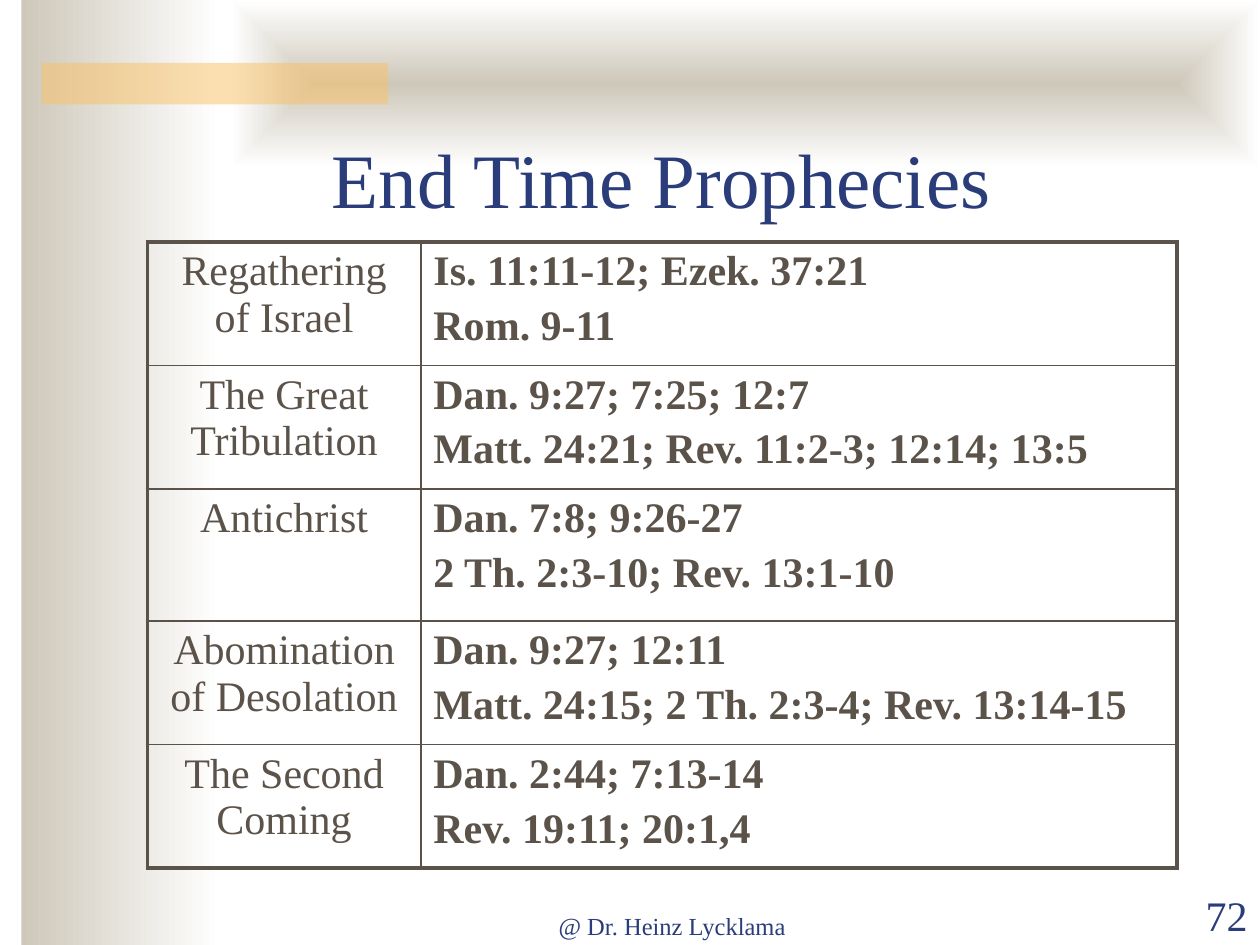
from lxml import etree
from pptx import Presentation
from pptx.dml.color import RGBColor
from pptx.enum.shapes import MSO_SHAPE
from pptx.enum.text import MSO_ANCHOR, MSO_AUTO_SIZE, PP_ALIGN
from pptx.oxml.ns import qn
from pptx.util import Inches, Pt

RECTANGLE = MSO_SHAPE.RECTANGLE
BOTTOM = MSO_ANCHOR.BOTTOM
NO_AUTOFIT = MSO_AUTO_SIZE.NONE
LEFT, CENTER, RIGHT = PP_ALIGN.LEFT, PP_ALIGN.CENTER, PP_ALIGN.RIGHT

FONT = "Times New Roman"
COLORS = {"navy": "2A3D7A", "brown": "5B5249", "stone": "CEC8BA",
          "white": "FFFFFF", "amber": "FAC164"}

PROPHECIES = [
    ("Regathering of Israel", ["Is. 11:11-12; Ezek. 37:21", "Rom. 9-11"]),
    ("The Great Tribulation",
     ["Dan. 9:27; 7:25; 12:7", "Matt. 24:21; Rev. 11:2-3; 12:14; 13:5"]),
    ("Antichrist", ["Dan. 7:8; 9:26-27", "2 Th. 2:3-10; Rev. 13:1-10"]),
    ("Abomination of Desolation",
     ["Dan. 9:27; 12:11", "Matt. 24:15; 2 Th. 2:3-4; Rev. 13:14-15"]),
    ("The Second Coming", ["Dan. 2:44; 7:13-14", "Rev. 19:11; 20:1,4"]),
]
COLUMN_WIDTHS = [2.17, 6]
ROW_HEIGHTS = [0.98, 0.98, 1.05, 0.98, 0.98]
OUTER_LINE, INNER_LINE = 2.25, 1


def rgb(name):
    return RGBColor.from_string(COLORS[name])


class SlideBuilder:
    def __init__(self, presentation):
        self.slide = presentation.slides.add_slide(presentation.slide_layouts[5])
        self.shapes = self.slide.shapes

    def rectangle(self, *box):
        shape = self.shapes.add_shape(RECTANGLE, *map(Inches, box))
        shape.shadow.inherit = False
        shape.line.fill.background()
        return shape

    def gradient_rectangle(self, *box, from_center=False):
        """Fade from stone to white, left to right or outward from the center."""
        shape = self.rectangle(*box)
        shape.fill.gradient()
        shape.fill.gradient_angle = 0
        for stop, position, color in zip(shape.fill.gradient_stops, (0, 1), ("stone", "white")):
            stop.position = position
            stop.color.rgb = rgb(color)
        if from_center:
            gradient = shape.element.spPr.find(qn("a:gradFill"))
            shade = etree.Element(qn("a:path"), path="shape")
            sides = dict.fromkeys("ltrb", "50000")
            etree.SubElement(shade, qn("a:fillToRect"), sides)
            gradient.replace(gradient.find(qn("a:lin")), shade)

    def translucent_rectangle(self, *box, color, opacity):
        shape = self.rectangle(*box)
        shape.fill.solid()
        shape.fill.fore_color.rgb = rgb(color)
        color_element = shape.element.spPr.find(".//" + qn("a:srgbClr"))
        etree.SubElement(color_element, qn("a:alpha"), val=str(opacity * 1000))

    def add_lines(self, frame, lines, size, color, alignment, bold=False):
        font_format = {"name": FONT, "size": Pt(size), "bold": bold}
        for index, line in enumerate(lines):
            paragraph = frame.add_paragraph() if index else frame.paragraphs[0]
            paragraph.alignment = alignment
            if index:
                paragraph.space_before = Pt(size * 0.2)
            run = paragraph.add_run()
            run.text = line
            for name, value in font_format.items():
                setattr(run.font, name, value)
            run.font.color.rgb = rgb(color)

    def bottom_text(self, shape, text, size, alignment):
        frame_format = {"word_wrap": True, "auto_size": NO_AUTOFIT,
                        "vertical_anchor": BOTTOM}
        for name, value in frame_format.items():
            setattr(shape.text_frame, name, value)
        self.add_lines(shape.text_frame, [text], size, "navy", alignment)

    def text(self, *box, text, size, alignment):
        self.bottom_text(self.shapes.add_textbox(*map(Inches, box)), text, size, alignment)

    def title(self, *box, text, size):
        title = self.shapes.title
        for name, value in zip(("left", "top", "width", "height"), box):
            setattr(title, name, Inches(value))
        self.bottom_text(title, text, size, CENTER)
        # Bring the title in front of the background rectangles.
        title.element.getparent().append(title.element)

    def cell_borders(self, cell, widths):
        properties = cell._tc.get_or_add_tcPr()
        for side, width in widths.items():
            line = etree.SubElement(properties, qn(f"a:ln{side}"), w=str(Pt(width)))
            fill = etree.SubElement(line, qn("a:solidFill"))
            etree.SubElement(fill, qn("a:srgbClr"), val=COLORS["brown"])

    def table(self, left, top, rows, column_widths, row_heights):
        row_count, column_count = len(row_heights), len(column_widths)
        box = (left, top, sum(column_widths), sum(row_heights))
        table = self.shapes.add_table(row_count, column_count, *map(Inches, box)).table
        table.first_row = table.horz_banding = False
        for column, width in zip(table.columns, column_widths):
            column.width = Inches(width)
        for row, height in zip(table.rows, row_heights):
            row.height = Inches(height)
        for row_index, (event, references) in enumerate(rows):
            event_cell, reference_cell = table.rows[row_index].cells
            self.add_lines(event_cell.text_frame, [event], 24, "brown", CENTER)
            self.add_lines(reference_cell.text_frame, references, 24, "brown", LEFT, bold=True)
            for column_index, cell in enumerate((event_cell, reference_cell)):
                outer = {"L": column_index == 0, "R": column_index == column_count - 1,
                         "T": row_index == 0, "B": row_index == row_count - 1}
                self.cell_borders(cell, {side: OUTER_LINE if is_outer else INNER_LINE
                                         for side, is_outer in outer.items()})
                cell.fill.background()


def main():
    presentation = Presentation()
    presentation.slide_width, presentation.slide_height = Inches(10), Inches(7.5)
    builder = SlideBuilder(presentation)
    builder.gradient_rectangle(0.17, 0, 1.58, 7.5)
    builder.gradient_rectangle(1.83, 0, 8.17, 1.33, from_center=True)
    builder.translucent_rectangle(0.33, 0.5, 2.75, 0.33, color="amber", opacity=50)
    builder.text(3.75, 7.01, 3.17, 0.5, text="@ Dr. Heinz Lycklama", size=14, alignment=CENTER)
    builder.text(9, 7.01, 1, 0.5, text="72", size=24, alignment=RIGHT)
    builder.title(2, 1.08, 6.5, 0.75, text="End Time Prophecies", size=44)
    builder.table(1.17, 1.92, PROPHECIES, COLUMN_WIDTHS, ROW_HEIGHTS)
    presentation.save("out.pptx")


if __name__ == "__main__":
    main()
